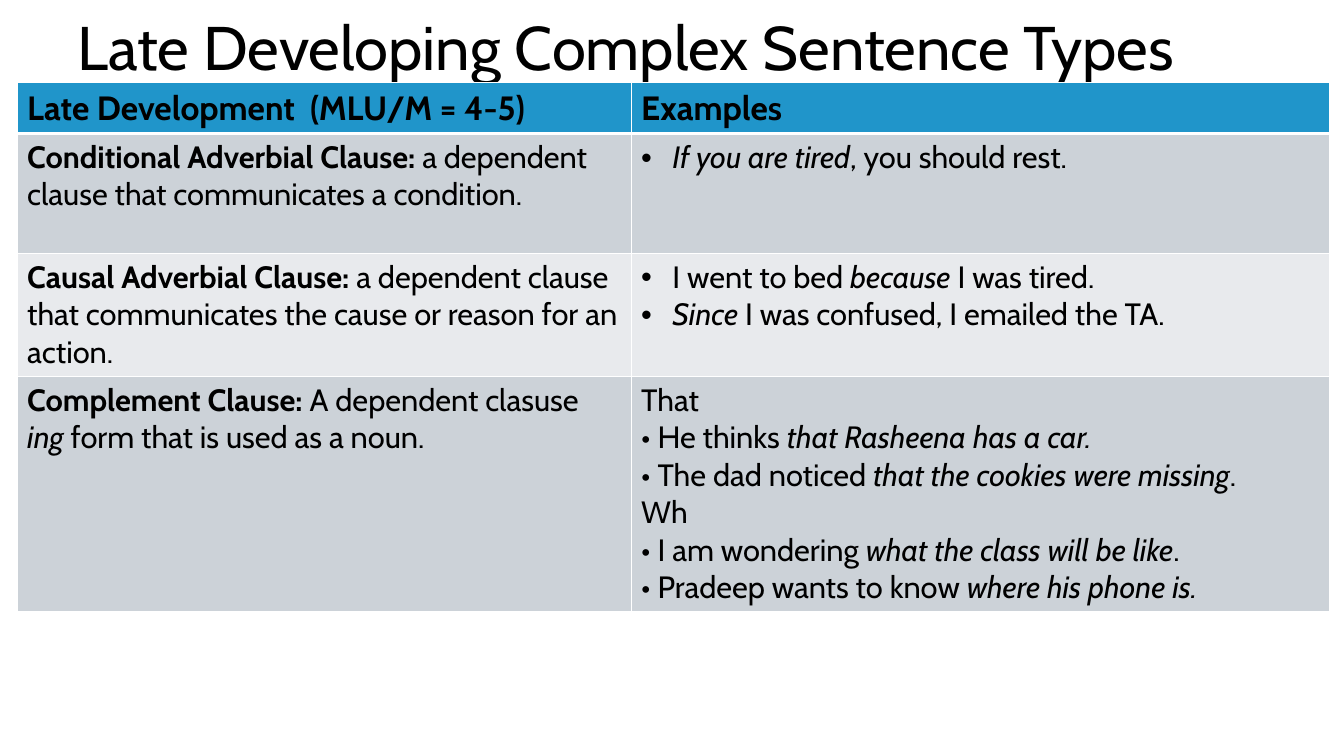
from pptx import Presentation
from pptx.dml.color import RGBColor
from pptx.enum.text import MSO_ANCHOR
from pptx.oxml import parse_xml
from pptx.oxml.ns import nsdecls
from pptx.util import Inches, Pt

HUES = {"ink": "000000", "head": "2095CA", "dark": "CCD2D8",
        "light": "E8EAED", "rule": "FFFFFF"}
COLS = [6.09, 6.93]
# Each row: height, fill, text size, left lines, right lines, bulleted right cell
ROWS = [
    (0.45, "head", 24, ["#Late Development  (MLU/M = 4-5)#"], ["#Examples#"], False),
    (1.19, "dark", 22,
     ["#Conditional Adverbial Clause: #a dependent clause that communicates a condition."],
     ["*If you are tired*, you should rest."], True),
    (1.22, "light", 22,
     ["#Causal Adverbial Clause: #a dependent clause that communicates "
      "the cause or reason for an action."],
     ["I went to bed *because* I was tired.",
      "*Since *I was confused, I emailed the TA."], True),
    (2.33, "dark", 22,
     ["#Complement Clause: #A dependent clasuse  *ing* form that is used as a noun."],
     ["That",
      "• He thinks *that Rasheena has a car.*",
      "• The dad noticed *that the cookies were missing*.",
      "Wh",
      "• I am wondering *what the class will be like*.",
      "• Pradeep wants to know *where his phone is.*"], False),
]


class Deck:
    font = "Cabin"

    def __init__(self):
        self.prs = Presentation()
        self.prs.slide_width = Inches(13.33)
        self.prs.slide_height = Inches(7.5)
        self.slide = self.prs.slides.add_slide(self.prs.slide_layouts[5])

    def run(self, para, text, size, bold=False, italic=False):
        run = para.add_run()
        run.text = text
        look = {"name": self.font, "size": Pt(size), "bold": bold, "italic": italic}
        for key, value in look.items():
            setattr(run.font, key, value)
        run.font.color.rgb = RGBColor.from_string(HUES["ink"])

    def rich(self, para, line, size):
        """Write a line in which #...# is bold and *...* is italic."""
        for i, chunk in enumerate(line.split("#")):
            for j, text in enumerate(chunk.split("*")):
                if text:
                    self.run(para, text, size, i % 2 == 1, j % 2 == 1)

    def title(self, text):
        box = self.slide.shapes.title
        place = {"left": 0.67, "top": 0.03, "width": 12, "height": 0.94}
        for key, value in place.items():
            setattr(box, key, Inches(value))
        box.text_frame.word_wrap = True
        box.text_frame.vertical_anchor = MSO_ANCHOR.MIDDLE
        para = box.text_frame.paragraphs[0]
        para.line_spacing = 0.9
        props = para._p.get_or_add_pPr()
        props.set("algn", "l")
        self.run(para, text, 44)

    def bullet(self, para):
        props = para._p.get_or_add_pPr()
        props.set("marL", str(Inches(0.31)))
        props.set("indent", str(-Inches(0.31)))
        for tag in ('buFont {} typeface="Arial"', 'buChar {} char="•"'):
            props.append(parse_xml(f"<a:{tag.format(nsdecls('a'))}/>"))

    def edge(self, cell, widths):
        """Draw the cell's borders; they must come before its fill."""
        props = cell._tc.get_or_add_tcPr()
        for i, (side, width) in enumerate(widths.items()):
            props.insert(i, parse_xml(
                f'<a:ln{side} {nsdecls("a")} w="{Pt(width)}"><a:solidFill>'
                f'<a:srgbClr val="{HUES["rule"]}"/></a:solidFill></a:ln{side}>'))

    def cell(self, cell, lines, size, fill, dots):
        cell.fill.solid()
        cell.fill.fore_color.rgb = RGBColor.from_string(HUES[fill])
        frame = cell.text_frame
        for i, line in enumerate(lines):
            para = frame.add_paragraph() if i else frame.paragraphs[0]
            if dots:
                self.bullet(para)
            self.rich(para, line, size)

    def table(self, left, top):
        high = sum(row[0] for row in ROWS)
        grid = self.slide.shapes.add_table(
            len(ROWS), len(COLS), Inches(left), Inches(top),
            Inches(sum(COLS)), Inches(high)).table
        for col, width in zip(grid.columns, COLS):
            col.width = Inches(width)
        for r, (tall, fill, size, term, cases, dots) in enumerate(ROWS):
            grid.rows[r].height = Inches(tall)
            rules = {"L": 1, "R": 1, "T": 3 if r == 1 else 1, "B": 3 if r == 0 else 1}
            for c, lines in enumerate((term, cases)):
                cell = grid.cell(r, c)
                self.cell(cell, lines, size, fill, dots and c == 1)
                self.edge(cell, rules)


def main():
    deck = Deck()
    deck.title("Late Developing Complex Sentence Types")
    deck.table(0.17, 0.82)
    deck.prs.save("out.pptx")


if __name__ == "__main__":
    main()
